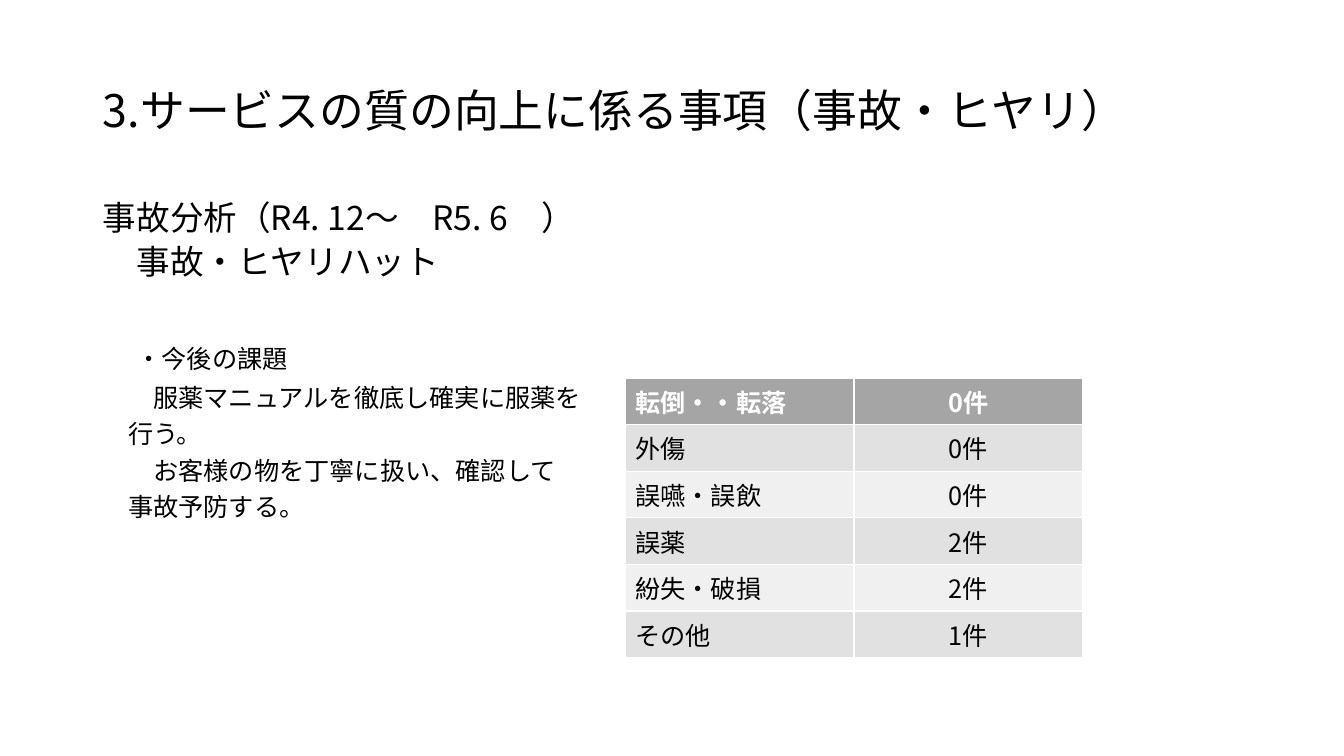
from dataclasses import dataclass

import lxml.etree
import pptx
import pptx.dml.color
import pptx.enum.text
import pptx.oxml.ns
import pptx.util

Inches = pptx.util.Inches
Pt = pptx.util.Pt
RGBColor = pptx.dml.color.RGBColor
Align = pptx.enum.text.PP_ALIGN
Anchor = pptx.enum.text.MSO_ANCHOR
qn = pptx.oxml.ns.qn

FONT = "Noto Sans CJK JP"
BLACK = RGBColor(0x00, 0x00, 0x00)
WHITE = RGBColor(0xFF, 0xFF, 0xFF)
HEADER_GRAY = RGBColor(0xA5, 0xA5, 0xA5)
DARK_BAND = RGBColor(0xE1, 0xE1, 0xE1)
LIGHT_BAND = RGBColor(0xF0, 0xF0, 0xF0)


@dataclass
class Line:
    text: str
    size: int
    indent: int = 0
    before: int = 10


@dataclass
class Incident:
    kind: str
    count: str


TITLE = "3.サービスの質の向上に係る事項（事故・ヒヤリ）"
LINES = [
    Line("事故分析（R4. 12～　R5. 6　）", 24),
    Line("事故・ヒヤリハット", 24, 24),
    Line("・今後の課題", 18, 24, 50),
    Line("服薬マニュアルを徹底し確実に服薬を", 18, 36, 12),
    Line("行う。", 18, 18),
    Line("お客様の物を丁寧に扱い、確認して", 18, 36),
    Line("事故予防する。", 18, 18),
]
INCIDENTS = [
    Incident("転倒・・転落", "0件"),
    Incident("外傷", "0件"),
    Incident("誤嚥・誤飲", "0件"),
    Incident("誤薬", "2件"),
    Incident("紛失・破損", "2件"),
    Incident("その他", "1件"),
]


def write(para, text: str, size: int, color: RGBColor, align, bold: bool = False) -> None:
    para.text = text
    para.alignment = align
    font = para.font
    font.name = FONT
    font.size = Pt(size)
    font.bold = bold
    font.color.rgb = color
    for span in para.runs:
        properties = span.font
        properties.name = FONT
        latin = span._r.get_or_add_rPr().find(qn("a:latin"))
        east_asian = lxml.etree.Element(qn("a:ea"), typeface=FONT)
        latin.addnext(east_asian)


def place(box, left: float, top: float, width: float, height: float) -> None:
    box.left, box.top = Inches(left), Inches(top)
    box.width, box.height = Inches(width), Inches(height)
    box.text_frame.auto_size = pptx.enum.text.MSO_AUTO_SIZE.NONE


def draw_title(page) -> None:
    box = page.shapes.title
    place(box, 0.92, 0.4, 11.5, 1.45)
    box.text_frame.vertical_anchor = Anchor.MIDDLE
    para = box.text_frame.paragraphs[0]
    write(para, TITLE, 32, BLACK, Align.LEFT)
    para.line_spacing = 0.9


def draw_body(page) -> None:
    box = page.placeholders[1]
    place(box, 0.92, 2, 11.5, 4.76)
    frame = box.text_frame
    for index, line in enumerate(LINES):
        para = frame.add_paragraph() if index else frame.paragraphs[0]
        write(para, line.text, line.size, BLACK, Align.LEFT)
        para.line_spacing = 0.74
        para.space_before = Pt(line.before)
        properties = para._p.get_or_add_pPr()
        properties.set("marL", str(Pt(line.indent)))
        properties.set("indent", "0")
        bullet = lxml.etree.Element(qn("a:buNone"))
        properties.find(qn("a:spcBef")).addnext(bullet)


def draw_table(page) -> None:
    frame = page.shapes.add_table(
        len(INCIDENTS), 2, Inches(6.2), Inches(3.75), Inches(4.54), Inches(2.4)
    )
    for row, incident in enumerate(INCIDENTS):
        header = row == 0
        fill = HEADER_GRAY if header else DARK_BAND if row % 2 else LIGHT_BAND
        color = WHITE if header else BLACK
        for column, text in enumerate((incident.kind, incident.count)):
            cell = frame.table.cell(row, column)
            cell.fill.solid()
            cell.fill.fore_color.rgb = fill
            align = Align.CENTER if column else Align.LEFT
            write(cell.text_frame.paragraphs[0], text, 18, color, align, header)


def main() -> None:
    deck = pptx.Presentation()
    deck.slide_width = Inches(13.33)
    deck.slide_height = Inches(7.5)
    page = deck.slides.add_slide(deck.slide_layouts[1])
    draw_title(page)
    draw_body(page)
    draw_table(page)
    deck.save("out.pptx")


if __name__ == "__main__":
    main()
